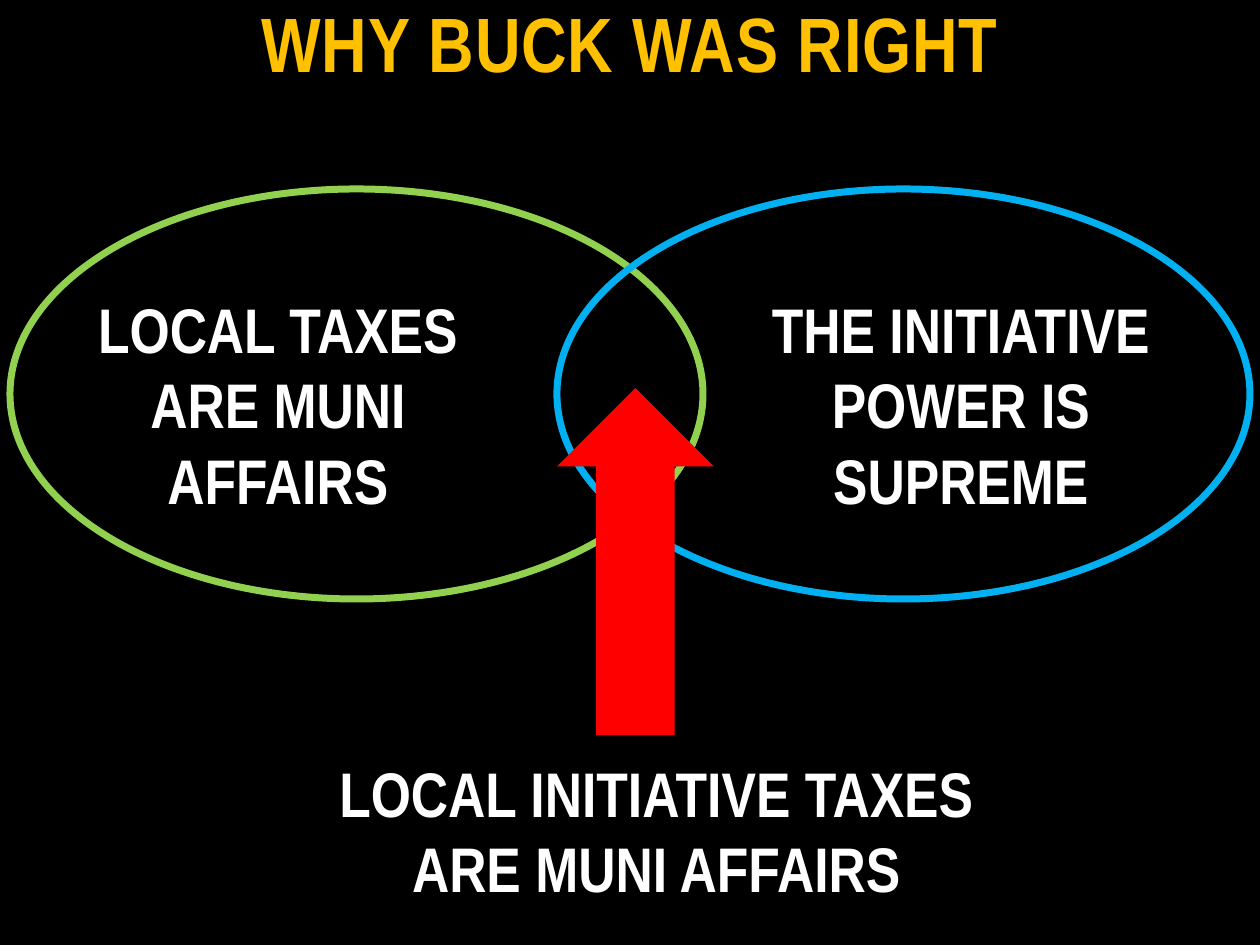
from pptx import Presentation
from pptx.dml.color import RGBColor
from pptx.enum.shapes import MSO_SHAPE as Shape
from pptx.enum.text import MSO_ANCHOR as Anchor, PP_ALIGN as Align
from pptx.util import Emu, Pt

EMU_PER_PX = 914400 / 126
FONT = "Arial Narrow"


def px(length):
    """Turn whole pixels into EMU."""
    return Emu(round(length * EMU_PER_PX))


def color(hex_string):
    """Turn a hex string into a colour."""
    return RGBColor.from_string(hex_string)


def add_text(slide, box, text, size=36, fill="FFFFFF", anchor=Anchor.TOP, spacing=0):
    """Add a wrapped, centred, bold text box."""
    frame = slide.shapes.add_textbox(*map(px, box)).text_frame
    frame.word_wrap = True
    frame.vertical_anchor = anchor
    paragraph = frame.paragraphs[0]
    paragraph.alignment = Align.CENTER
    run = paragraph.add_run()
    run.text = text
    run.font.name = FONT
    run.font.size = Pt(size)
    run.font.bold = True
    run.font.color.rgb = color(fill)
    if spacing:
        run.font._element.set("spc", str(round(spacing * 100)))


def add_shape(slide, kind, box, fill=None, line=None, line_width=4):
    """Add a preset shape with an optional fill and outline."""
    shape = slide.shapes.add_shape(kind, *map(px, box))
    shape.shadow.inherit = False
    if fill:
        shape.fill.solid()
        shape.fill.fore_color.rgb = color(fill)
    else:
        shape.fill.background()
    if line:
        shape.line.color.rgb = color(line)
        shape.line.width = Pt(line_width)
    else:
        shape.line.fill.background()


def main():
    """Build the slide and save it."""
    presentation = Presentation()
    presentation.slide_width, presentation.slide_height = px(1260), px(945)
    slide = presentation.slides.add_slide(presentation.slide_layouts[6])
    slide.background.fill.solid()
    slide.background.fill.fore_color.rgb = color("000000")

    add_text(slide, (0, 0, 1260, 94), "WHY BUCK WAS RIGHT",
             size=44, fill="FFC000", anchor=Anchor.BOTTOM, spacing=0.5)
    for left, outline in ((10, "92D050"), (557, "00B0F0")):
        add_shape(slide, Shape.OVAL, (left, 189, 693, 410), line=outline)
    for left, text in ((31, "LOCAL TAXES ARE MUNI AFFAIRS"),
                       (714, "THE INITIATIVE POWER IS SUPREME")):
        add_text(slide, (left, 284, 494, 242), text)
    add_shape(slide, Shape.UP_ARROW, (557, 388, 157, 347), fill="FF0000")
    add_text(slide, (305, 748, 703, 165), "LOCAL INITIATIVE TAXES ARE MUNI AFFAIRS")

    presentation.save("out.pptx")


if __name__ == "__main__":
    main()
